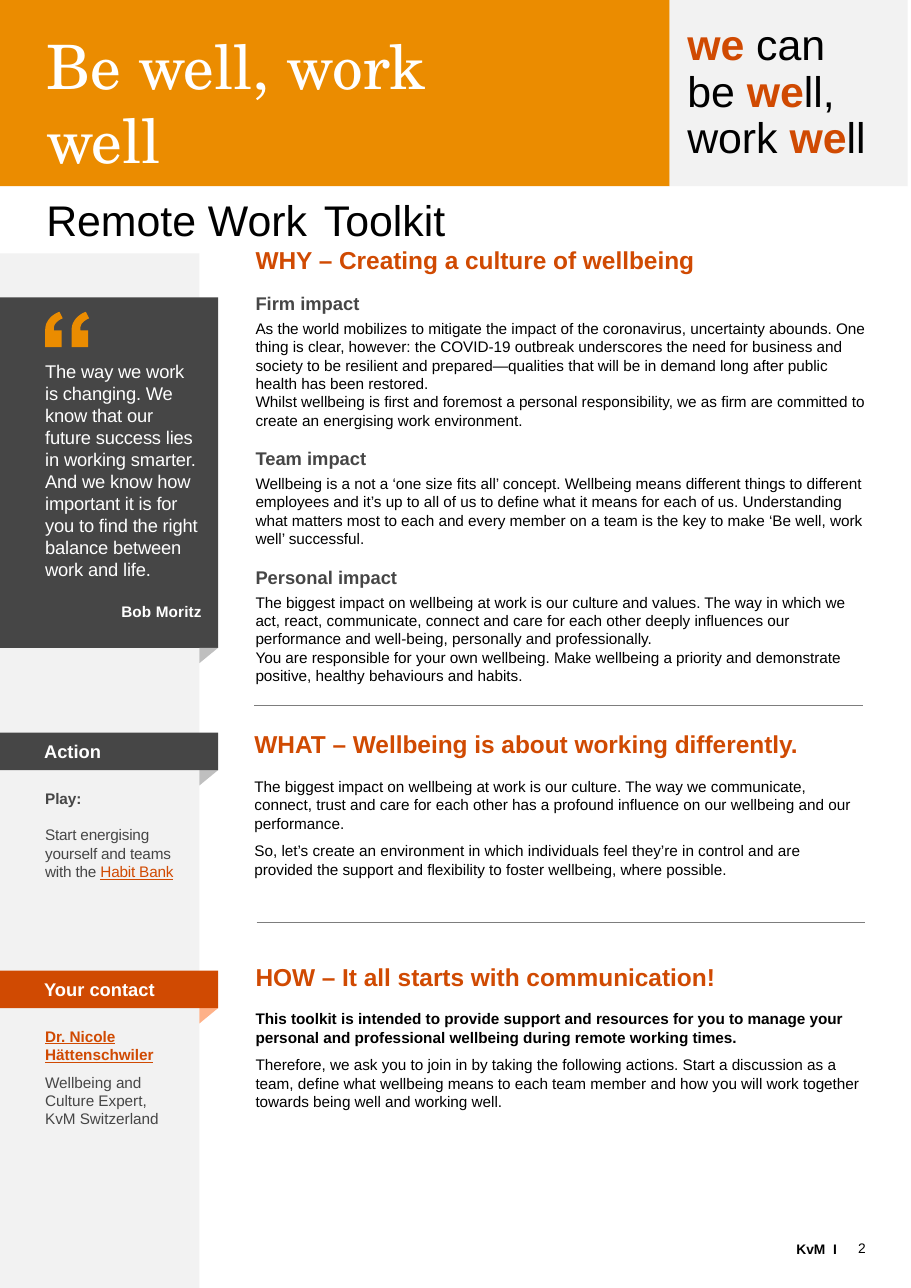
from dataclasses import dataclass

from lxml import etree
from pptx import Presentation
from pptx import util as u
from pptx.dml import color
from pptx.enum import shapes, text
from pptx.oxml import ns

PX = 9144  # 100 px to the inch
COLORS = {
    "orange": "EB8C00", "rust": "D04A02", "peach": "FEB188", "dark": "464646",
    "rule": "7D7D7D", "fold": "BFBFBF", "pale": "F2F2F2", "white": "FFFFFF", "black": "000000",
}
SERIF = "TeX Gyre Schola"
BLANK_LINE = 12


@dataclass
class Span:
    text: str
    size: float = 10
    color: str = "black"
    bold: bool = False
    underline: bool = False
    font: str = "Arial"
    spacing: int = 0  # hundredths of a point


@dataclass
class Para:
    spans: list[Span]
    after: float = 0
    before: float = 0
    align: text.PP_ALIGN = text.PP_ALIGN.LEFT
    line: float = 1.0


@dataclass
class TextBox:
    left: int
    top: int
    width: int
    height: int
    paras: list[Para]
    anchor: text.MSO_ANCHOR = text.MSO_ANCHOR.TOP


@dataclass
class Ribbon:
    top: int
    label: str
    fill: str
    fold: str


def rgb(name: str) -> color.RGBColor:
    return color.RGBColor.from_string(COLORS[name])


def paint(shape, fill: str) -> None:
    shape.shadow.inherit = False
    shape.fill.solid()
    shape.fill.fore_color.rgb = rgb(fill)
    shape.line.fill.background()


def write(frame, paras: list[Para], anchor: text.MSO_ANCHOR, margins=(0, 0, 0, 0)) -> None:
    frame.word_wrap = True
    frame.vertical_anchor = anchor
    (frame.margin_left, frame.margin_top,
     frame.margin_right, frame.margin_bottom) = [m * PX for m in margins]
    for index, item in enumerate(paras):
        para = frame.add_paragraph() if index else frame.paragraphs[0]
        para.alignment = item.align
        para.line_spacing = item.line
        para.space_before, para.space_after = u.Pt(item.before), u.Pt(item.after)
        for span in item.spans:
            for number, part in enumerate(span.text.split("\n")):
                if number:
                    para.add_line_break()
                if part:
                    add_run(para, part, span)


def add_run(para, words: str, span: Span) -> None:
    run = para.add_run()
    run.text = words
    run.font.name, run.font.size = span.font, u.Pt(span.size)
    run.font.bold, run.font.underline = span.bold, span.underline
    run.font.color.rgb = rgb(span.color)
    if span.spacing:
        run._r.get_or_add_rPr().set("spc", str(span.spacing))


def add_block(page, left: int, top: int, width: int, height: int, fill: str):
    block = page.shapes.add_shape(shapes.MSO_SHAPE.RECTANGLE, left * PX, top * PX, width * PX, height * PX)
    paint(block, fill)
    return block


def add_text(page, box: TextBox) -> None:
    shape = page.shapes.add_textbox(box.left * PX, box.top * PX, box.width * PX, box.height * PX)
    write(shape.text_frame, box.paras, box.anchor)


def add_outline(page, contours: list[list[tuple[float, float]]], fill: str) -> None:
    outlines = [[(round(x * PX), round(y * PX)) for x, y in points] for points in contours]
    builder = page.shapes.build_freeform(*outlines[0][0], scale=1.0)
    for index, points in enumerate(outlines):
        if index:
            builder.move_to(*points[0])
        builder.add_line_segments(points[1:], close=True)
    paint(builder.convert_to_shape(), fill)


def add_fold(page, top: int, fill: str) -> None:
    add_outline(page, [[(181, top), (198, top), (181, top + 14)]], fill)


def add_rule(page, left: int, top: int) -> None:
    rule = page.shapes.add_connector(
        shapes.MSO_CONNECTOR.STRAIGHT, left * PX, top * PX, (left + 552) * PX, top * PX)
    rule.line.color.rgb = rgb("rule")
    rule.line.width = u.Pt(0.75)
    etree.SubElement(rule._element.spPr, ns.qn("a:effectLst"))


def curve(p0, p1, p2, p3, steps: int = 8) -> list[tuple[float, float]]:
    """Points along a cubic Bezier curve, without its start."""
    points = []
    for step in range(1, steps + 1):
        t = step / steps
        weights = ((1 - t) ** 3, 3 * t * (1 - t) ** 2, 3 * t * t * (1 - t), t ** 3)
        points.append(tuple(sum(w * p[axis] for w, p in zip(weights, (p0, p1, p2, p3))) for axis in (0, 1)))
    return points


def quote_mark(left: int, top: int) -> list[tuple[float, float]]:
    points = [(15, 32), (0, 32), (0, 21),
              *curve((0, 21), (0, 17), (0, 14), (1, 11)),
              *curve((1, 11), (2, 9), (3, 7), (5, 5)),
              *curve((5, 5), (7, 3), (10, 1), (13, 0)), (16, 6),
              *curve((16, 6), (13, 7), (11, 9), (10, 10)),
              *curve((10, 10), (8, 12), (8, 14), (8, 17)), (15, 17)]
    return [(left + x, top + y) for x, y in points]


def heading(words: str) -> Para:
    return Para([Span(words, 16, "rust", True)], after=12)


def subheading(words: str, before: float = BLANK_LINE) -> Para:
    return Para([Span(words, 12, "dark", True)], after=3, before=before)


def body(words: str, after: float = 0, bold: bool = False) -> Para:
    return Para([Span(words, bold=bold)], after=after)


def we_line(*parts: str) -> Para:
    """A slogan line with each "we" picked out."""
    return Para([Span(part, 28, "rust" if part == "we" else "black", part == "we") for part in parts], line=0.9)


MIDDLE, RIGHT = text.MSO_ANCHOR.MIDDLE, text.PP_ALIGN.RIGHT
SLOGAN = [we_line("we", " can"), we_line("be ", "we", "ll,"), we_line("work ", "we", "ll")]
RIBBONS = [Ribbon(665, "Action", "dark", "fold"), Ribbon(881, "Your contact", "rust", "peach")]
TEXTS = [
    TextBox(42, 26, 459, 123, [Para([
        Span("Be well, work well\n", 40, "white", font=SERIF), Span("Remote Work", 28),
        Span(" ", 40, "white", font=SERIF), Span("Toolkit", 28)], after=2)]),
    TextBox(232, 222, 553, 404, [
        heading("WHY – Creating a culture of wellbeing"),
        subheading("Firm impact", before=0),
        body("As the world mobilizes to mitigate the impact of the coronavirus, uncertainty abounds. One thing is "
             "clear, however: the COVID-19 outbreak underscores the need for business and society to be resilient "
             "and prepared—qualities that will be in demand long after public health has been restored."),
        body("Whilst wellbeing is first and foremost a personal responsibility, we as firm are committed to "
             "create an energising work environment."),
        subheading("Team impact"),
        body("Wellbeing is a not a ‘one size fits all’ concept. Wellbeing means different things to different "
             "employees and it’s up to all of us to define what it means for each of us. Understanding what "
             "matters most to each and every member on a team is the key to make ‘Be well, work well’ successful."),
        subheading("Personal impact"),
        body("The biggest impact on wellbeing at work is our culture and values. The way in which we act, react, "
             "communicate, connect and care for each other deeply influences our performance and well-being, "
             "personally and professionally."),
        body("You are responsible for your own wellbeing. Make wellbeing a priority and demonstrate positive, "
             "healthy behaviours and habits.")]),
    TextBox(231, 662, 551, 187, [
        heading("WHAT – Wellbeing is about working differently."),
        body("The biggest impact on wellbeing at work is our culture. The way we communicate, connect, trust and "
             "care for each other has a profound influence on our wellbeing and our performance.", 6),
        body("So, let’s create an environment in which individuals feel they’re in control and are provided the "
             "support and flexibility to foster wellbeing, where possible.", 6)]),
    TextBox(232, 873, 557, 164, [
        heading("HOW – It all starts with communication!"),
        body("This toolkit is intended to provide support and resources for you to manage your personal and "
             "professional wellbeing during remote working times.", 6, True),
        body("Therefore, we ask you to join in by taking the following actions. Start a discussion as a team, "
             "define what wellbeing means to each team member and how you will work together towards being well "
             "and working well.", 6)]),
    TextBox(41, 327, 142, 155, [
        Para([Span("The way we work is changing. We know that our future success lies in working smarter. And we "
                   "know how important it is for you to find the right balance between work and life.",
                   12, "white", spacing=-10)]),
        Para([Span("Bob Moritz", 10, "white", True, spacing=10)], before=14.4, align=RIGHT)]),
    TextBox(41, 716, 127, 120, [
        Para([Span("Play:", color="dark", bold=True)]),
        Para([Span("Start energising yourself and teams with the ", color="dark", spacing=-10),
              Span("Habit Bank", color="rust", underline=True, spacing=-10)], before=BLANK_LINE)]),
    TextBox(41, 932, 127, 120, [
        Para([Span("Dr. Nicole Hättenschwiler", color="rust", bold=True, underline=True)], after=6),
        Para([Span("Wellbeing and Culture Expert,\nKvM Switzerland", color="dark")], after=6)]),
    TextBox(766, 1121, 20, 23, [Para([Span("2", 9)], align=RIGHT)], MIDDLE),
    TextBox(723, 1122, 73, 23, [Para([
        Span("KvM", 9, bold=True), Span(" ", 9, bold=True, spacing=250), Span("I", 9, bold=True)])], MIDDLE),
]


def main() -> None:
    deck = Presentation()
    deck.slide_width, deck.slide_height = 827 * PX, 1169 * PX
    page = deck.slides.add_slide(deck.slide_layouts[6])
    add_block(page, 0, 230, 181, 939, "pale")
    add_block(page, 0, 0, 608, 169, "orange")
    slogan = add_block(page, 608, 0, 216, 169, "pale")
    write(slogan.text_frame, SLOGAN, MIDDLE, (16, 5, 10, 5))
    add_block(page, 0, 270, 198, 318, "dark")
    add_fold(page, 588, "fold")
    add_outline(page, [quote_mark(left, 283) for left in (41, 65)], "orange")
    for ribbon in RIBBONS:
        add_fold(page, ribbon.top + 34, ribbon.fold)
        band = add_block(page, 0, ribbon.top, 198, 34, ribbon.fill)
        write(band.text_frame, [Para([Span(ribbon.label, 12, "white", True)])], MIDDLE, (40, 5, 10, 5))
    add_rule(page, 231, 640)
    add_rule(page, 233, 837)
    for box in TEXTS:
        add_text(page, box)
    deck.save("out.pptx")


if __name__ == "__main__":
    main()
